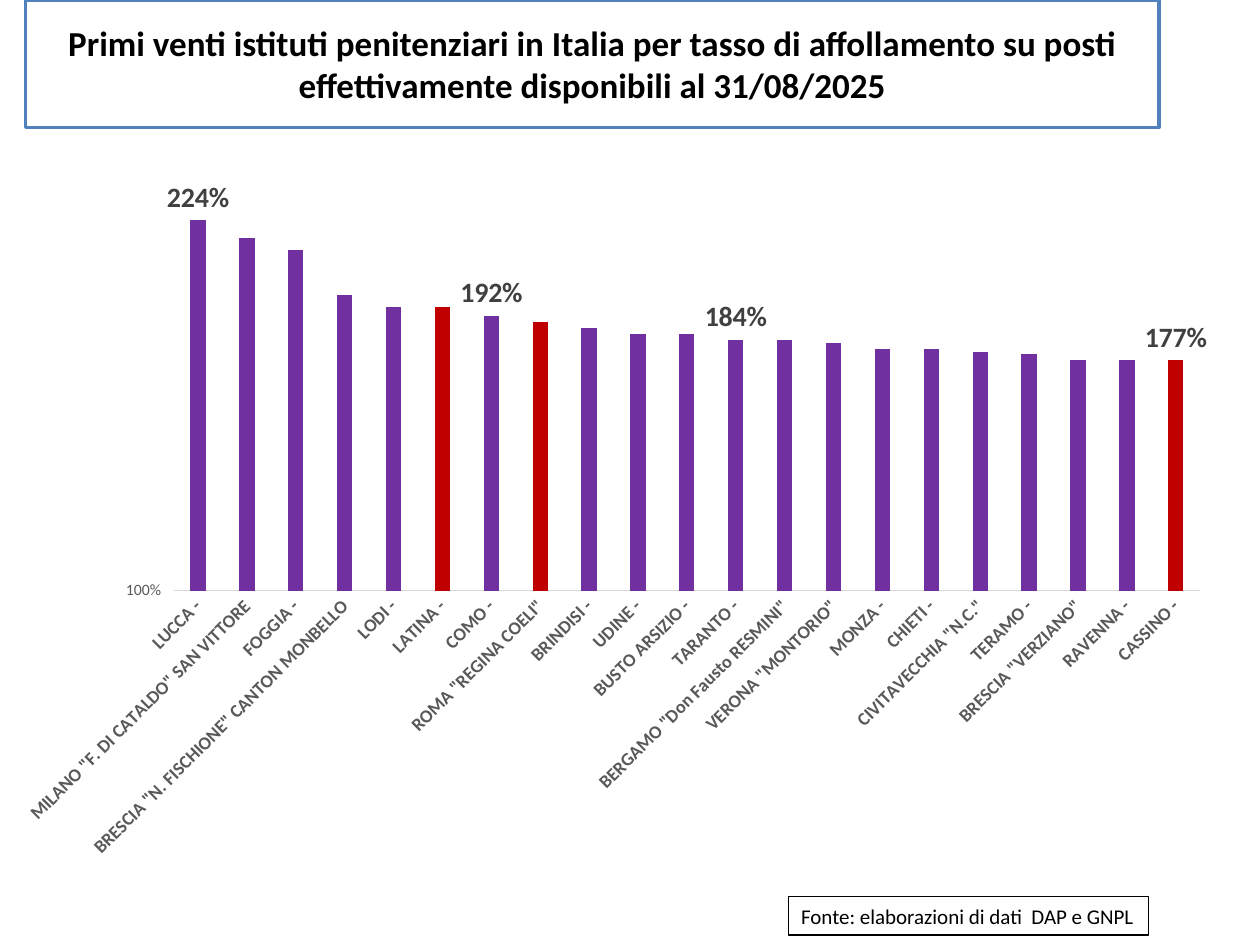
from dataclasses import dataclass

from lxml.etree import SubElement
from pptx import Presentation
from pptx.chart.data import CategoryChartData
from pptx.dml.color import RGBColor
from pptx.enum.chart import XL_CHART_TYPE, XL_LABEL_POSITION, XL_TICK_MARK
from pptx.enum.text import MSO_ANCHOR, PP_ALIGN
from pptx.oxml import parse_xml
from pptx.oxml.ns import nsdecls, qn
from pptx.util import Cm, Pt

FONT = "Calibri"
PURPLE, RED = "7030A0", "C00000"
GRID, AXIS_TEXT, LABEL_TEXT = "D9D9D9", "595959", "404040"


@dataclass
class Prison:
    name: str
    rate: float
    color: str = PURPLE
    labelled: bool = False


@dataclass
class Frame:
    left: float
    top: float
    width: float
    height: float
    border: str
    border_pt: float
    size: float
    bold: bool
    align: PP_ALIGN


PRISONS = [
    Prison("LUCCA -", 2.24, labelled=True),
    Prison('MILANO "F. DI CATALDO" SAN VITTORE', 2.18),
    Prison("FOGGIA -", 2.14),
    Prison('BRESCIA "N. FISCHIONE" CANTON MONBELLO', 1.99),
    Prison("LODI -", 1.95),
    Prison("LATINA -", 1.95, RED),
    Prison("COMO -", 1.92, labelled=True),
    Prison('ROMA "REGINA COELI"', 1.90, RED),
    Prison("BRINDISI -", 1.88),
    Prison("UDINE -", 1.86),
    Prison("BUSTO ARSIZIO -", 1.86),
    Prison("TARANTO -", 1.84, labelled=True),
    Prison('BERGAMO "Don Fausto RESMINI"', 1.84),
    Prison('VERONA "MONTORIO"', 1.83),
    Prison("MONZA -", 1.81),
    Prison("CHIETI -", 1.81),
    Prison('CIVITAVECCHIA "N.C."', 1.80),
    Prison("TERAMO -", 1.79),
    Prison('BRESCIA "VERZIANO"', 1.77),
    Prison("RAVENNA -", 1.77),
    Prison("CASSINO -", 1.77, RED, True),
]
TITLE = Frame(0.51, 0, 22.86, 2.57, "4F81BD", 2, 20, True, PP_ALIGN.CENTER)
SOURCE = Frame(15.9, 18.08, 7.26, 0.77, "000000", 0.75, 12, False, PP_ALIGN.LEFT)


def rgb(value: str) -> RGBColor:
    return RGBColor.from_string(value)


def style_font(font, size: float, color: str, bold: bool = False) -> None:
    font.name, font.size, font.bold = FONT, Pt(size), bold
    font.color.rgb = rgb(color)


def style_line(line, color: str, width: float) -> None:
    line.color.rgb = rgb(color)
    line.width = Pt(width)


def fill_frame(s, frame: Frame, text: str, wrap: bool) -> None:
    """Place a bordered white box and write its text."""
    s.left, s.top = Cm(frame.left), Cm(frame.top)
    s.width, s.height = Cm(frame.width), Cm(frame.height)
    s.fill.solid()
    s.fill.fore_color.rgb = rgb("FFFFFF")
    style_line(s.line, frame.border, frame.border_pt)
    tf = s.text_frame
    tf.text = text
    tf.word_wrap = wrap
    tf.vertical_anchor = MSO_ANCHOR.MIDDLE
    p = tf.paragraphs[0]
    p.alignment = frame.align
    style_font(p.runs[0].font, frame.size, "000000", frame.bold)


def set_plot_layout(chart, x: float, y: float, w: float, h: float) -> None:
    """Fix the inner plot area, in fractions of the chart."""
    plot_area = chart.element.xpath("c:chart/c:plotArea")[0]
    for old in plot_area.findall(qn("c:layout")):
        plot_area.remove(old)
    layout = parse_xml(f"<c:layout {nsdecls('c')}/>")
    manual = SubElement(layout, qn("c:manualLayout"))
    settings = {"layoutTarget": "inner", "xMode": "edge", "yMode": "edge",
                "x": x, "y": y, "w": w, "h": h}
    for tag, value in settings.items():
        SubElement(manual, qn(f"c:{tag}")).set("val", str(value))
    plot_area.insert(0, layout)


def style_axes(chart) -> None:
    cat = chart.category_axis
    cat.major_tick_mark = cat.minor_tick_mark = XL_TICK_MARK.NONE
    style_font(cat.tick_labels.font, 10.5, AXIS_TEXT, True)
    style_line(cat.format.line, GRID, 0.75)
    body = chart.element.xpath("c:chart/c:plotArea/c:catAx/c:txPr/a:bodyPr")[0]
    body.set("rot", "-2700000")
    body.set("vert", "horz")

    val = chart.value_axis
    val.minimum_scale, val.maximum_scale, val.major_unit = 1, 2.5, 100
    val.major_tick_mark = XL_TICK_MARK.OUTSIDE
    val.minor_tick_mark = XL_TICK_MARK.NONE
    val.tick_labels.number_format = "0%"
    val.tick_labels.number_format_is_linked = False
    style_font(val.tick_labels.font, 9, AXIS_TEXT)
    val.format.line.fill.background()
    style_line(val.major_gridlines.format.line, GRID, 0.75)


def add_rate_chart(slide, prisons: list[Prison]) -> None:
    data = CategoryChartData(number_format="0%")
    data.categories = [prison.name for prison in prisons]
    data.add_series("Tasso di affollamento", [prison.rate for prison in prisons])
    chart = slide.shapes.add_chart(XL_CHART_TYPE.COLUMN_CLUSTERED, Cm(0.05), Cm(2.57),
                                   Cm(24.64), Cm(15.06), data).chart
    chart.has_legend = chart.has_title = False
    style_font(chart.font, 10, "000000")
    style_axes(chart)
    set_plot_layout(chart, 0.14, 0.02, 0.84, 0.6)

    plot = chart.plots[0]
    plot.gap_width, plot.overlap, plot.vary_by_categories = 219, -27, False
    series = plot.series[0]
    series.format.fill.solid()
    series.format.fill.fore_color.rgb = rgb(PURPLE)
    series.data_labels.show_value = False
    for i, prison in enumerate(prisons):
        if prison.color != PURPLE:
            fill = series.points[i].format.fill
            fill.solid()
            fill.fore_color.rgb = rgb(prison.color)
        if prison.labelled:
            label = series.points[i].data_label
            style_font(label.font, 16, LABEL_TEXT, True)
            label.position = XL_LABEL_POSITION.OUTSIDE_END


def main() -> None:
    prs = Presentation()
    prs.slide_width, prs.slide_height = Cm(25.4), Cm(19.05)
    slide = prs.slides.add_slide(prs.slide_layouts[5])
    fill_frame(slide.shapes.title, TITLE,
               "Primi venti istituti penitenziari in Italia per tasso di affollamento "
               "su posti effettivamente disponibili al 31/08/2025", True)
    source = slide.shapes.add_textbox(0, 0, 0, 0)
    fill_frame(source, SOURCE, "Fonte: elaborazioni di dati  DAP e GNPL", False)
    add_rate_chart(slide, PRISONS)
    prs.save("out.pptx")


if __name__ == "__main__":
    main()
